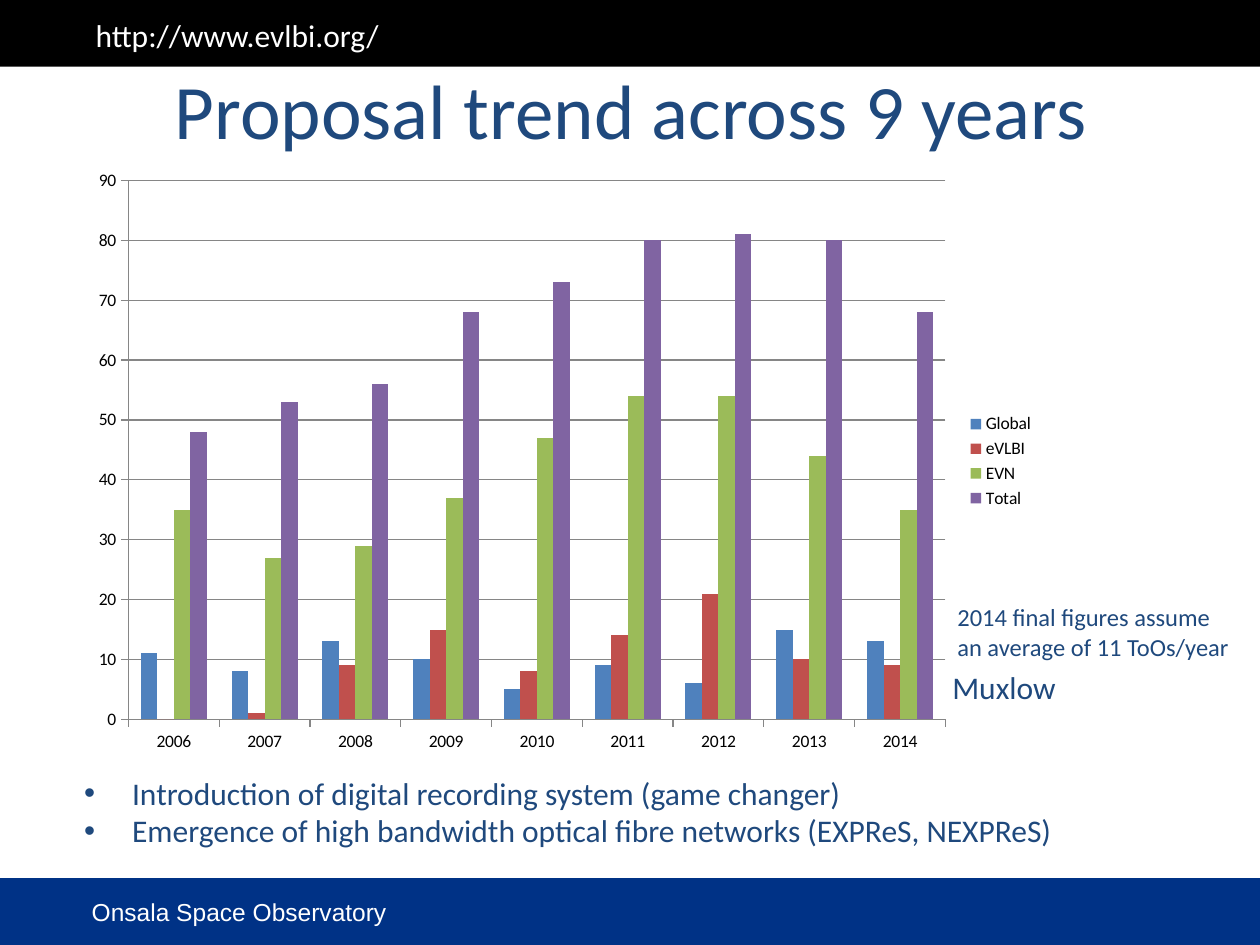
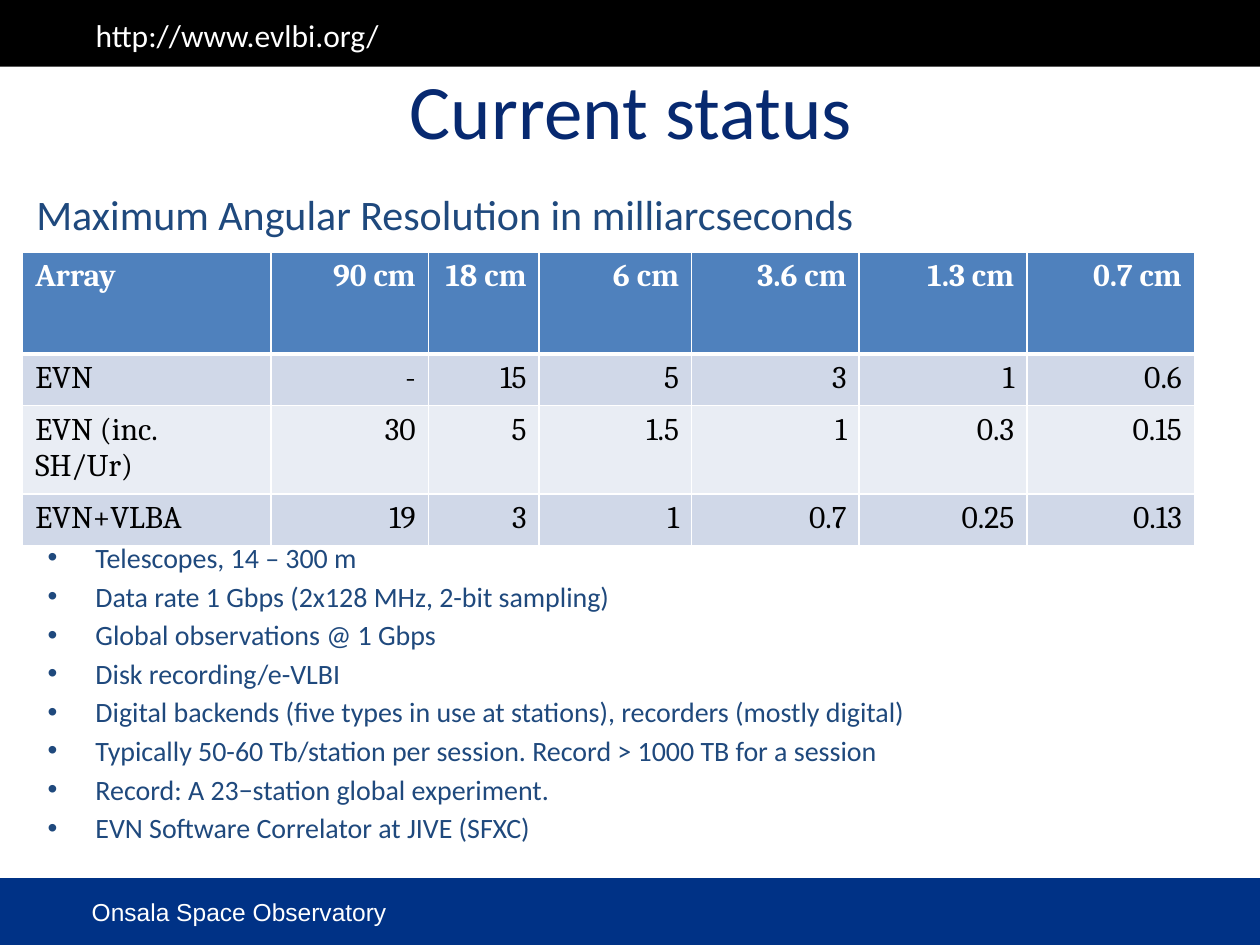
import dataclasses
import typing
import lxml.etree
import pptx
import pptx.chart.data
import pptx.dml.color
import pptx.enum.chart
import pptx.enum.shapes
import pptx.enum.text
import pptx.oxml.ns
import pptx.util

Inches = pptx.util.Inches
Pt = pptx.util.Pt
qn = pptx.oxml.ns.qn
ALIGN = pptx.enum.text.PP_ALIGN

# Shared look
BLUE, NAVY, BAND = "1F497D", "072970", "003286"
WHITE, BLACK, GREY = "FFFFFF", "000000", "868686"
HEAD, DARK, LIGHT = "4F81BD", "D0D8E8", "E9EDF4"
SANS = "Calibri"


@dataclasses.dataclass(frozen=True)
class Bar:
    top: float
    fill: str


@dataclasses.dataclass(frozen=True)
class Label:
    box: tuple[float, float, float, float]
    lines: tuple[str, ...]
    size: float
    tint: str = BLUE
    face: str = SANS
    align: typing.Any = ALIGN.LEFT
    wrap: bool = True
    dots: bool = False
    gap: float = 0


@dataclasses.dataclass(frozen=True)
class Series:
    name: str
    tint: str
    vals: tuple[int, ...]


BARS = (Bar(6.97, BAND), Bar(0, BLACK))
FRAME = (
    Label((0.63, 7.07, 2.6, 0.34), ("Onsala Space Observatory",), 14, WHITE, "Arial"),
    Label((0.66, 0.08, 2.49, 0.4), ("http://www.evlbi.org/",), 18, WHITE, wrap=False),
)

# Trend slide
YEARS = [str(year) for year in range(2006, 2015)]
TREND = (
    Series("Global", "4F81BD", (11, 8, 13, 10, 5, 9, 6, 15, 13)),
    Series("eVLBI", "C0504D", (0, 1, 9, 15, 8, 14, 21, 10, 9)),
    Series("EVN", "9BBB59", (35, 27, 29, 37, 47, 54, 54, 44, 35)),
    Series("Total", "8064A2", (48, 53, 56, 68, 73, 80, 81, 80, 68)),
)
TREND_TEXT = (
    Label((0.57, 6.09, 7.92, 0.71), (
        "Introduction of digital recording system (game changer)",
        "Emergence of high bandwidth optical fibre networks (EXPReS, NEXPReS)",
    ), 18, dots=True),
    Label((7.46, 5.25, 1.11, 0.4), ("Muxlow",), 18),
    Label((7.5, 4.73, 2.5, 0.57),
          ("2014 final figures assume", "an average of 11 ToOs/year"), 14),
)

# Status slide
COLS = (1.97, 1.25, 0.88, 1.21, 1.33, 1.33, 1.33)
ROWS = (0.81, 0.41, 0.41, 0.41)
CELLS = (
    ("Array", "90 cm", "18 cm", "6 cm", "3.6 cm", "1.3 cm", "0.7 cm"),
    ("EVN", "-", "15", "5", "3", "1", "0.6"),
    ("EVN (inc. SH/Ur)", "30", "5", "1.5", "1", "0.3", "0.15"),
    ("EVN+VLBA", "19", "3", "1", "0.7", "0.25", "0.13"),
)
STATUS_TEXT = (
    Label((0.19, 1.45, 6.77, 0.51),
          ("Maximum Angular Resolution in milliarcseconds",), 24, wrap=False),
    Label((0.28, 4.24, 9.4, 2.27), (
        "Telescopes, 14 – 300 m",
        "Data rate 1 Gbps (2x128 MHz, 2-bit sampling)",
        "Global observations @ 1 Gbps",
        "Disk recording/e-VLBI",
        "Digital backends (five types in use at stations), recorders (mostly digital)",
        "Typically 50-60 Tb/station per session. Record > 1000 TB for a session",
        "Record: A 23−station global experiment.",
        "EVN Software Correlator at JIVE (SFXC)",
    ), 16, dots=True, gap=2.9),
)


def paint(color: typing.Any, tint: str) -> None:
    color.rgb = pptx.dml.color.RGBColor.from_string(tint)


def fill(item: typing.Any, tint: str) -> None:
    item.fill.solid()
    paint(item.fill.fore_color, tint)


def apply(item: typing.Any, values: dict[str, typing.Any]) -> None:
    for name, value in values.items():
        setattr(item, name, value)


def style(font: typing.Any, size: float, tint: str, face: str = SANS,
          bold: bool = False) -> None:
    apply(font, {"size": Pt(size), "name": face, "bold": bold})
    paint(font.color, tint)


def add_dot(para: typing.Any) -> None:
    props = para._p.get_or_add_pPr()
    props.set("marL", str(Inches(0.38)))
    props.set("indent", str(-Inches(0.38)))
    lxml.etree.SubElement(props, qn("a:buFont"), typeface="Arial")
    lxml.etree.SubElement(props, qn("a:buChar"), char="•")


def add_label(slide: typing.Any, label: Label) -> None:
    frame = slide.shapes.add_textbox(*map(Inches, label.box)).text_frame
    frame.word_wrap = label.wrap
    for row, text in enumerate(label.lines):
        para = frame.paragraphs[0] if row == 0 else frame.add_paragraph()
        para.alignment = label.align
        if row and label.gap:
            para.space_before = Pt(label.gap)
        if label.dots:
            add_dot(para)
        run = para.add_run()
        run.text = text
        style(run.font, label.size, label.tint, label.face)


def add_page(deck: typing.Any, title: str, tint: str,
             labels: tuple[Label, ...]) -> typing.Any:
    slide = deck.slides.add_slide(deck.slide_layouts[6])
    for bar in BARS:
        shape = slide.shapes.add_shape(
            pptx.enum.shapes.MSO_SHAPE.RECTANGLE,
            Inches(0), Inches(bar.top), Inches(10), Inches(0.53))
        shape.shadow.inherit = False
        shape.line.fill.background()
        fill(shape, bar.fill)
    head = Label((0.51, 0.45, 9, 1.25), (title,), 44, tint, align=ALIGN.CENTER)
    for label in (*FRAME, head, *labels):
        add_label(slide, label)
    return slide


def add_trend(slide: typing.Any) -> None:
    data = pptx.chart.data.CategoryChartData()
    data.categories = YEARS
    for item in TREND:
        data.add_series(item.name, item.vals)
    enum = pptx.enum.chart
    chart = slide.shapes.add_chart(
        enum.XL_CHART_TYPE.COLUMN_CLUSTERED,
        *map(Inches, (0.63, 1.26, 7.68, 4.8)), data).chart
    apply(chart, {"has_title": False, "has_legend": True})
    style(chart.font, 10, BLACK)
    apply(chart.legend, {"position": enum.XL_LEGEND_POSITION.RIGHT,
                         "include_in_layout": False})
    plot = chart.plots[0]
    apply(plot, {"gap_width": 150, "overlap": 0, "vary_by_categories": False})
    for series, item in zip(plot.series, TREND):
        fill(series.format, item.tint)
    # Axes and grid share one thin grey line
    value = chart.value_axis
    apply(value, {"minimum_scale": 0, "maximum_scale": 90, "major_unit": 10,
                  "has_major_gridlines": True})
    for axis in (chart.category_axis, value):
        axis.major_tick_mark = enum.XL_TICK_MARK.OUTSIDE
    for part in (chart.category_axis, value, value.major_gridlines):
        part.format.line.width = Pt(0.75)
        paint(part.format.line.color, GREY)


def add_edge(cell: typing.Any, side: str, width: float) -> None:
    line = lxml.etree.SubElement(cell._tc.get_or_add_tcPr(), qn(f"a:ln{side}"),
                                 w=str(Pt(width)))
    solid = lxml.etree.SubElement(line, qn("a:solidFill"))
    lxml.etree.SubElement(solid, qn("a:srgbClr"), val=WHITE)


def add_grid(slide: typing.Any) -> None:
    table = slide.shapes.add_table(
        len(ROWS), len(COLS), Inches(0.18), Inches(2),
        Inches(sum(COLS)), Inches(sum(ROWS))).table
    for col, width in enumerate(COLS):
        table.columns[col].width = Inches(width)
    for row, height in enumerate(ROWS):
        table.rows[row].height = Inches(height)
        first = row == 0
        shade = HEAD if first else (LIGHT, DARK)[row % 2]
        edges = {"L": 1, "R": 1, "T": 3 if row == 1 else 1, "B": 3 if first else 1}
        for col, text in enumerate(CELLS[row]):
            cell = table.cell(row, col)
            for side, width in edges.items():
                add_edge(cell, side, width)
            fill(cell, shade)
            para = cell.text_frame.paragraphs[0]
            para.alignment = ALIGN.RIGHT if col else ALIGN.LEFT
            run = para.add_run()
            run.text = text
            style(run.font, 18, WHITE if first else BLACK, "Cambria", first)


def main() -> None:
    deck = pptx.Presentation()
    apply(deck, {"slide_width": Inches(10), "slide_height": Inches(7.5)})
    add_trend(add_page(deck, "Proposal trend across 9 years", BLUE, TREND_TEXT))
    add_grid(add_page(deck, "Current status", NAVY, STATUS_TEXT))
    deck.save("out.pptx")


if __name__ == "__main__":
    main()
